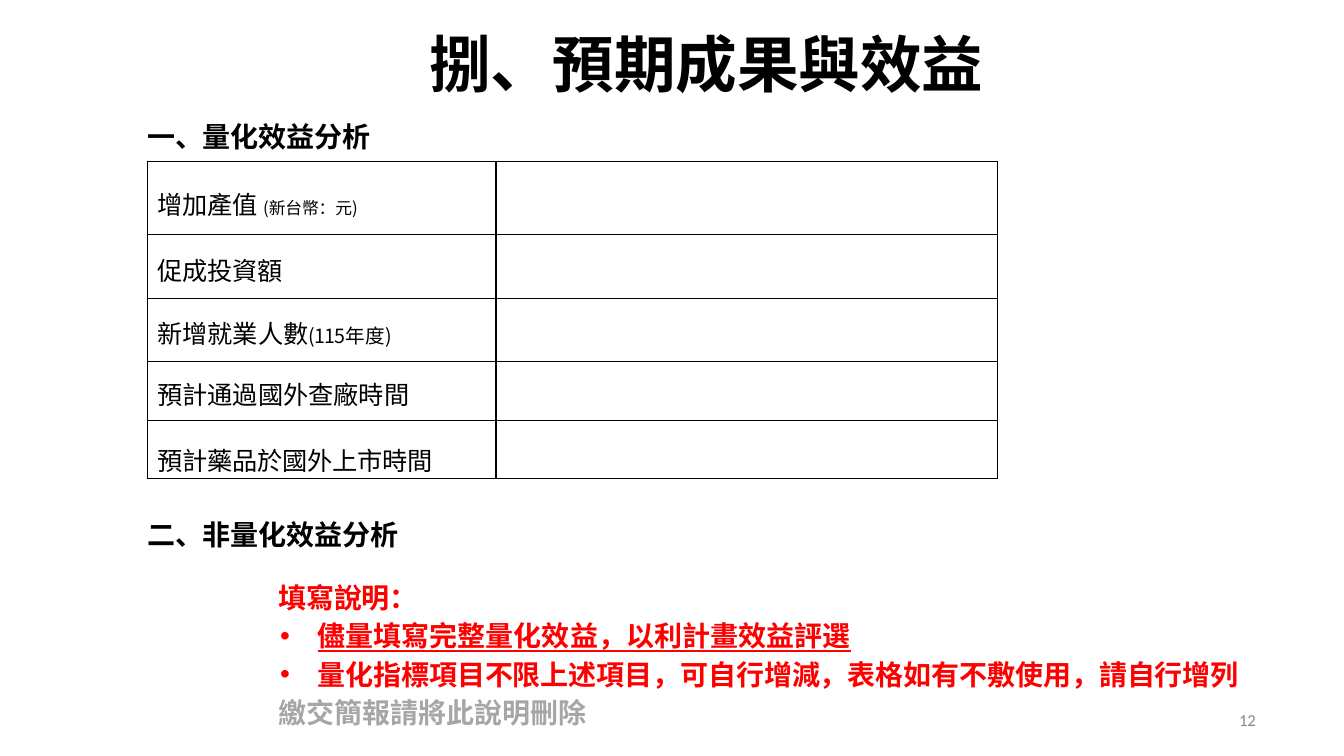
from lxml import etree
from pptx import Presentation
from pptx import util as u
from pptx.dml.color import RGBColor
from pptx.enum import text
from pptx.oxml.ns import qn

SANS = "Noto Sans CJK SC"
BLACK, RED, GREY = "000000", "FF0000", "A6A6A6"


def style(r, size, color=BLACK, bold=False, name=SANS, spacing=-0.1):
    f = r.font
    f.size, f.bold, f.name = u.Pt(size), bold, name
    f.color.rgb = RGBColor.from_string(color)
    rPr = r._r.get_or_add_rPr()
    rPr.set("spc", str(round(spacing * 100)))
    ea = etree.Element(qn("a:ea"), typeface=SANS)
    rPr.find(qn("a:latin")).addnext(ea)


def set_frame(sp, left, top, width, height):
    sp.left, sp.top = u.Inches(left), u.Inches(top)
    sp.width, sp.height = u.Inches(width), u.Inches(height)
    tf = sp.text_frame
    tf.word_wrap = True
    tf.auto_size = text.MSO_AUTO_SIZE.NONE
    tf.vertical_anchor = text.MSO_ANCHOR.TOP
    tf.margin_left = tf.margin_right = tf.margin_bottom = 0
    tf.margin_top = u.Inches(0.01)
    return tf


prs = Presentation()
prs.slide_width, prs.slide_height = u.Inches(13.33), u.Inches(7.5)
s = prs.slides.add_slide(prs.slide_layouts[5])
left = 1.46

# Title
tf = set_frame(s.shapes.title, 4.26, 0.25, 5.63, 0.75)
tf.text = "捌、預期成果與效益"
tf.paragraphs[0].alignment = text.PP_ALIGN.LEFT
style(tf.paragraphs[0].runs[0], 44, bold=True)

# Section headings
for heading, top in [("一、量化效益分析", 1.18), ("二、非量化效益分析", 5.12)]:
    tf = set_frame(s.shapes.add_textbox(0, 0, 0, 0), left, top, 2.7, 0.35)
    tf.text = heading
    style(tf.paragraphs[0].runs[0], 20, bold=True)

# Table of quantified benefits: row height, top margin, runs (text, size, spacing)
rows = [
    (0.73, 0.1, [("增加產值 ", 18, -0.1), ("(新台幣：元)", 12, -0.1)]),
    (0.63, 0.05, [("促成投資額", 18, -0.1)]),
    (0.63, 0.05, [("新增就業人數", 18, 0), ("(115", 14, -0.5),
                  ("年度", 14, 0), (")", 14, -0.5)]),
    (0.58, 0.05, [("預計通過國外查廠時間", 18, 0)]),
    (0.58, 0.2, [("預計藥品於國外上市時間", 18, -0.1)]),
]
table = s.shapes.add_table(len(rows), 2, u.Inches(left), u.Inches(1.6),
                           u.Inches(8.43), u.Inches(3.15)).table
table.first_row = table.horz_banding = False
for col, width in zip(table.columns, (3.46, 4.97)):
    col.width = u.Inches(width)
for row, (height, margin, runs) in zip(table.rows, rows):
    row.height = u.Inches(height)
    for cell in row.cells:
        tcPr = cell._tc.get_or_add_tcPr()
        for side in ("a:lnL", "a:lnR", "a:lnT", "a:lnB"):
            ln = etree.SubElement(tcPr, qn(side), w=str(u.Pt(1)))
            fill = etree.SubElement(ln, qn("a:solidFill"))
            etree.SubElement(fill, qn("a:srgbClr"), val=BLACK)
        cell.fill.background()
    label = row.cells[0]
    label.vertical_anchor = text.MSO_ANCHOR.MIDDLE
    label.margin_left, label.margin_top = u.Inches(0.1), u.Inches(margin)
    label.margin_right = label.margin_bottom = 0
    for words, size, spacing in runs:
        r = label.text_frame.paragraphs[0].add_run()
        r.text = words
        style(r, size, spacing=spacing)

# Filling instructions: text, colour, bulleted, underlined
notes = [
    ("填寫說明：", RED, False, False),
    ("儘量填寫完整量化效益，以利計畫效益評選", RED, True, True),
    ("量化指標項目不限上述項目，可自行增減，表格如有不敷使用，請自行增列", RED, True, False),
    ("繳交簡報請將此說明刪除", GREY, False, False),
]
tf = set_frame(s.shapes.add_textbox(0, 0, 0, 0), 2.76, 5.71, 9.77, 1.54)
for i, (words, color, bulleted, underlined) in enumerate(notes):
    p = tf.add_paragraph() if i else tf.paragraphs[0]
    p.text = words
    p.line_spacing = u.Pt(26.6)
    p.space_before = u.Pt(1 if i else 0)
    if bulleted:
        pPr = p._p.get_or_add_pPr()
        pPr.set("marL", str(u.Inches(0.39)))
        pPr.set("indent", str(u.Inches(-0.37)))
        etree.SubElement(pPr, qn("a:buFont"), typeface="Arial")
        etree.SubElement(pPr, qn("a:buChar"), char="•")
    r = p.runs[0]
    style(r, 20, color, True, "Calibri" if color == GREY else SANS,
          0 if underlined or color == GREY else -0.1)
    r.font.underline = underlined

# Page number
tf = set_frame(s.shapes.add_textbox(0, 0, 0, 0), 12.29, 7.06, 0.32, 0.18)
tf.text = "12"
tf.paragraphs[0].line_spacing = u.Pt(12.4)
style(tf.paragraphs[0].runs[0], 12, "888888", name="Calibri", spacing=-0.2)

prs.save("out.pptx")
